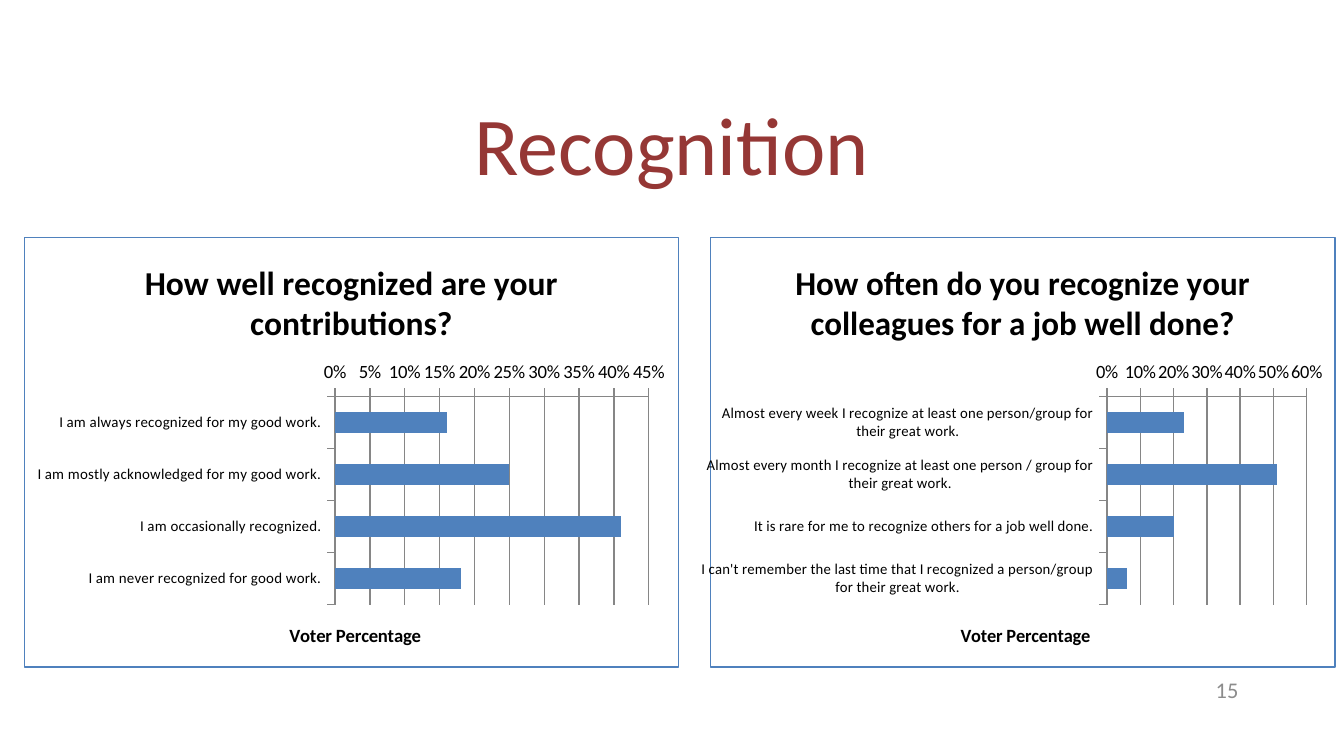
from lxml import etree
from pptx import Presentation
from pptx.chart.data import CategoryChartData
from pptx.dml.color import RGBColor
from pptx.enum.chart import XL_CHART_TYPE, XL_TICK_MARK
from pptx.enum.text import MSO_ANCHOR, PP_ALIGN
from pptx.oxml import parse_xml
from pptx.oxml.ns import nsdecls, qn
from pptx.util import Pt

PX = 9525
BAR = XL_CHART_TYPE.BAR_CLUSTERED
OUT, NONE = XL_TICK_MARK.OUTSIDE, XL_TICK_MARK.NONE
MID = MSO_ANCHOR.MIDDLE
MID_AL, RIGHT = PP_ALIGN.CENTER, PP_ALIGN.RIGHT
FONT, BLUE, GREY = "Calibri", "4F81BD", "868686"


def style(font, size, color="000000", bold=False):
    font.name, font.size, font.bold = FONT, Pt(size), bold
    font.color.rgb = RGBColor.from_string(color)


def lay(node, index, **spots):
    """Give a plot area or title a manual layout, in fractions of the chart."""
    for old in node.findall(qn("c:layout")):
        node.remove(old)
    layout = parse_xml(f"<c:layout {nsdecls('c')}/>")
    manual = etree.SubElement(layout, qn("c:manualLayout"))
    if "w" in spots:
        etree.SubElement(manual, qn("c:layoutTarget")).set("val", "inner")
    for key in ("xMode", "yMode"):
        etree.SubElement(manual, qn(f"c:{key}")).set("val", "edge")
    for key, val in spots.items():
        etree.SubElement(manual, qn(f"c:{key}")).set("val", str(val))
    node.insert(index, layout)


prs = Presentation()
prs.slide_width, prs.slide_height = 960 * PX, 540 * PX
slide = prs.slides.add_slide(prs.slide_layouts[6])

# Heading and page number
for text, box, size, color, align, space in (
    ("Recognition", (66, 54, 828, 105), 44, "953735", MID_AL, 0.9),
    ("15", (678, 478, 216, 29), 12, "8C8C8C", RIGHT, 1.0),
):
    frame = slide.shapes.add_textbox(*(v * PX for v in box)).text_frame
    frame.word_wrap = True
    frame.vertical_anchor = MID
    para = frame.paragraphs[0]
    para.text, para.alignment, para.line_spacing = text, align, space
    style(para.font, size, color)

# Poll results: title, left, width, axis top, axis step, plot x, plot width,
# axis title x, answers
polls = (
    ("How well recognized are your contributions?", 17, 468, 0.45, 0.05,
     0.475, 0.48, 0.4, {
         "I am always recognized for my good work.": 0.16,
         "I am mostly acknowledged for my good work.": 0.25,
         "I am occasionally recognized.": 0.41,
         "I am never recognized for good work.": 0.18,
     }),
    ("How often do you recognize your colleagues for a job well done?",
     501, 453, 0.6, 0.1, 0.635, 0.32, 0.395, {
         "Almost every week I recognize at least one person/group for "
         "their great work.": 0.23,
         "Almost every month I recognize at least one person / group for "
         "their great work.": 0.51,
         "It is rare for me to recognize others for a job well done.": 0.2,
         "I can't remember the last time that I recognized a person/group "
         "for their great work.": 0.06,
     }),
)
for title, left, width, top, step, plot_x, plot_w, name_x, votes in polls:
    data = CategoryChartData(number_format="0%")
    data.categories = list(votes)
    data.add_series("Series 1", list(votes.values()))
    chart = slide.shapes.add_chart(
        BAR, left * PX, 169 * PX, width * PX, 308 * PX, data).chart
    style(chart.font, 10)
    chart.has_legend = False

    plot = chart.plots[0]
    plot.gap_width, plot.vary_by_categories = 150, False
    fill = plot.series[0].format.fill
    fill.solid()
    fill.fore_color.rgb = RGBColor.from_string(BLUE)

    cat, val = chart.category_axis, chart.value_axis
    cat.reverse_order = True
    style(cat.tick_labels.font, 8)
    val.minimum_scale, val.maximum_scale, val.major_unit = 0, top, step
    val.tick_labels.number_format = "0%"
    val.tick_labels.number_format_is_linked = False
    style(val.tick_labels.font, 10)
    val.has_major_gridlines = True
    for axis in (cat, val):
        axis.major_tick_mark, axis.minor_tick_mark = OUT, NONE
    for part in (cat, val, val.major_gridlines):
        part.format.line.color.rgb = RGBColor.from_string(GREY)
        part.format.line.width = Pt(0.75)

    for owner, text, size in (
        (chart.chart_title, title, 18),
        (val.axis_title, "Voter Percentage", 10),
    ):
        owner.text_frame.text = text
        style(owner.text_frame.paragraphs[0].runs[0].font, size, bold=True)

    space = chart._chartSpace
    area = space.find(".//" + qn("c:plotArea"))
    lay(area, 0, x=plot_x, y=0.37, w=plot_w, h=0.485)
    lay(area.find(qn("c:valAx")).find(qn("c:title")), 1, x=name_x, y=0.89)
    space.find(qn("c:chart")).addnext(parse_xml(
        f'<c:spPr {nsdecls("c", "a")}><a:noFill/><a:ln w="9525"><a:solidFill>'
        f'<a:srgbClr val="{BLUE}"/></a:solidFill></a:ln></c:spPr>'))

prs.save("out.pptx")
